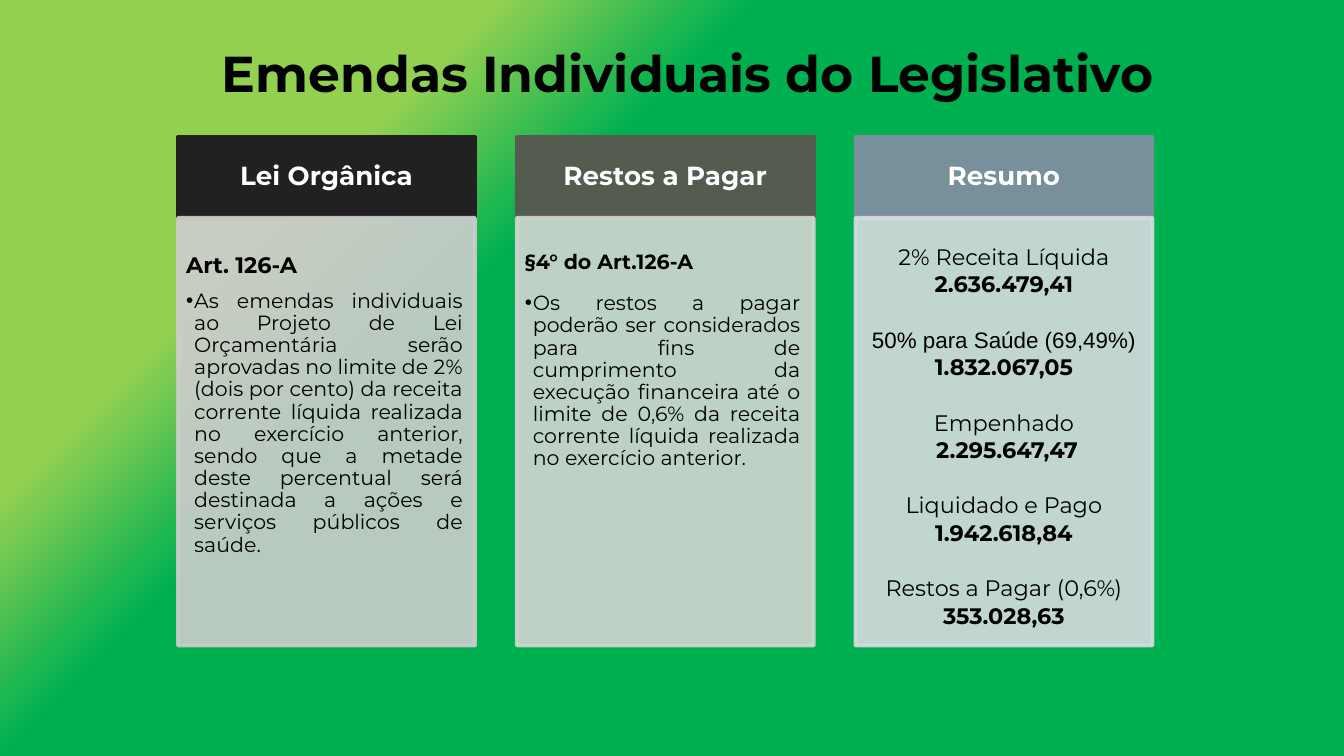
from dataclasses import dataclass

from pptx import Presentation
from pptx.dml.color import RGBColor
from pptx.enum.shapes import MSO_SHAPE
from pptx.enum.text import MSO_ANCHOR, PP_ALIGN
from pptx.oxml.ns import qn
from pptx.oxml.xmlchemy import OxmlElement
from pptx.util import Inches, Pt

WIDTH = Inches(10)
HEIGHT = WIDTH * 9 // 16


@dataclass(frozen=True)
class Theme:
    font: str = "Montserrat"
    alt_font: str = "Arial"
    ink: str = "000000"
    paper: str = "FFFFFF"
    lime: str = "92D050"
    green: str = "00B050"
    title: float = 27
    heading: float = 14
    body: float = 12
    small: float = 11


THEME = Theme()


@dataclass(frozen=True)
class Grid:
    """Column layout, in percent of the slide's width and height."""
    left: float = 13.25
    pitch: float = 25.2
    width: float = 22.1
    head_top: float = 18.1
    head_height: float = 10.7
    body_top: float = 28.8
    body_height: float = 56.6


GRID = Grid()


@dataclass(frozen=True)
class Line:
    text: str
    size: float = THEME.body
    bold: bool = False
    align: PP_ALIGN = PP_ALIGN.CENTER
    before: float = 0
    bullet: bool = False
    font: str = THEME.font
    color: str = THEME.ink


@dataclass(frozen=True)
class Column:
    heading: str
    head_fill: str
    body_fill: str
    insets: tuple[float, float, float, float]
    lines: list[Line]


def figures(*pairs: tuple[str, str]) -> list[Line]:
    """Label and bold amount for each pair, with a gap between pairs."""
    lines = []
    for i, (label, amount) in enumerate(pairs):
        font = THEME.alt_font if label.startswith("50%") else THEME.font
        lines.append(Line(label, before=14.9 if i else 0, font=font))
        lines.append(Line(amount, bold=True))
    return lines


def article(name: Line, text: str, gap: float) -> list[Line]:
    return [name, Line(text, THEME.small, align=PP_ALIGN.JUSTIFY, before=gap, bullet=True)]


COLUMNS = [
    Column("Lei Orgânica", "212121", "CDCDCD", (0.06, 0.27, 0.09, 0.1), article(
        Line("Art. 126-A", bold=True, align=PP_ALIGN.JUSTIFY),
        "As emendas individuais ao Projeto de Lei Orçamentária serão aprovadas no limite "
        "de 2% (dois por cento) da receita corrente líquida realizada no exercício "
        "anterior, sendo que a metade deste percentual será destinada a ações e serviços "
        "públicos de saúde.", 4.8)),
    Column("Restos a Pagar", "535C4F", "D2D6D1", (0.06, 0.25, 0.1, 0.1), article(
        Line("§4° do Art.126-A", THEME.small, True, PP_ALIGN.JUSTIFY),
        "Os restos a pagar poderão ser considerados para fins de cumprimento da execução "
        "financeira até o limite de 0,6% da receita corrente líquida realizada no "
        "exercício anterior.", 8.8)),
    Column("Resumo", "78909C", "D7DBDF", (0.01, 0.21, 0.01, 0.02), figures(
        ("2% Receita Líquida", "2.636.479,41"),
        ("50% para Saúde (69,49%)", "1.832.067,05"),
        ("Empenhado", " 2.295.647,47"),
        ("Liquidado e Pago", "1.942.618,84"),
        ("Restos a Pagar (0,6%)", "353.028,63"))),
]


def place(x: float, y: float, w: float, h: float) -> tuple[int, ...]:
    """Turn percentages of the slide into lengths."""
    return tuple(int(v * side / 100) for v, side in zip((x, y, w, h), (WIDTH, HEIGHT) * 2))


def add_bullet(p) -> None:
    pPr = p._p.get_or_add_pPr()
    pPr.set("marL", str(Inches(0.06)))
    pPr.set("indent", str(-Inches(0.06)))
    for tag, key, value in (("a:buFont", "typeface", THEME.alt_font), ("a:buChar", "char", "•")):
        bu = OxmlElement(tag)
        bu.set(key, value)
        pPr.append(bu)


def write(tf, lines: list[Line], insets, anchor=MSO_ANCHOR.TOP) -> None:
    tf.word_wrap = True
    tf.vertical_anchor = anchor
    tf.margin_left, tf.margin_top, tf.margin_right, tf.margin_bottom = map(Inches, insets)
    for i, line in enumerate(lines):
        p = tf.add_paragraph() if i else tf.paragraphs[0]
        p.text = line.text
        p.alignment = line.align
        p.line_spacing = 0.9
        p.space_before = Pt(line.before)
        p.space_after = Pt(0.15 * line.size)
        if line.bullet:
            add_bullet(p)
        f = p.runs[0].font
        f.name, f.size, f.bold = line.font, Pt(line.size), line.bold
        f.color.rgb = RGBColor.from_string(line.color)


def add_panel(slide, box, color: str, opacity: int = 100):
    sp = slide.shapes.add_shape(MSO_SHAPE.RECTANGLE, *box)
    sp.shadow.inherit = False
    sp.fill.solid()
    sp.fill.fore_color.rgb = sp.line.color.rgb = RGBColor.from_string(color)
    sp.line.width = Pt(2)
    if opacity < 100:
        for clr in sp._element.spPr.iter(qn("a:srgbClr")):
            alpha = OxmlElement("a:alpha")
            alpha.set("val", str(opacity * 1000))
            clr.append(alpha)
    return sp


def add_column(slide, index: int, col: Column) -> None:
    x = GRID.left + index * GRID.pitch
    head = add_panel(slide, place(x, GRID.head_top, GRID.width, GRID.head_height), col.head_fill)
    heading = Line(col.heading, THEME.heading, True, color=THEME.paper)
    write(head.text_frame, [heading], (0.11, 0.06, 0.11, 0.06), MSO_ANCHOR.MIDDLE)
    body = add_panel(slide, place(x, GRID.body_top, GRID.width, GRID.body_height),
                     col.body_fill, 90)
    write(body.text_frame, col.lines, col.insets)


def paint_background(slide) -> None:
    fill = slide.background.fill
    fill.gradient()
    fill.gradient_angle = 315
    for stop, position, color in zip(fill.gradient_stops, (0.24, 0.36),
                                     (THEME.lime, THEME.green)):
        stop.position = position
        stop.color.rgb = RGBColor.from_string(color)


def main() -> None:
    prs = Presentation()
    prs.slide_width, prs.slide_height = WIDTH, HEIGHT
    slide = prs.slides.add_slide(prs.slide_layouts[6])
    paint_background(slide)
    title = slide.shapes.add_textbox(*place(15.5, 5.1, 81, 10))
    write(title.text_frame,
          [Line("Emendas Individuais do Legislativo", THEME.title, True, PP_ALIGN.LEFT)],
          (0.1, 0.05, 0.1, 0.05), MSO_ANCHOR.MIDDLE)
    for i, col in enumerate(COLUMNS):
        add_column(slide, i, col)
    prs.save("out.pptx")


if __name__ == "__main__":
    main()
